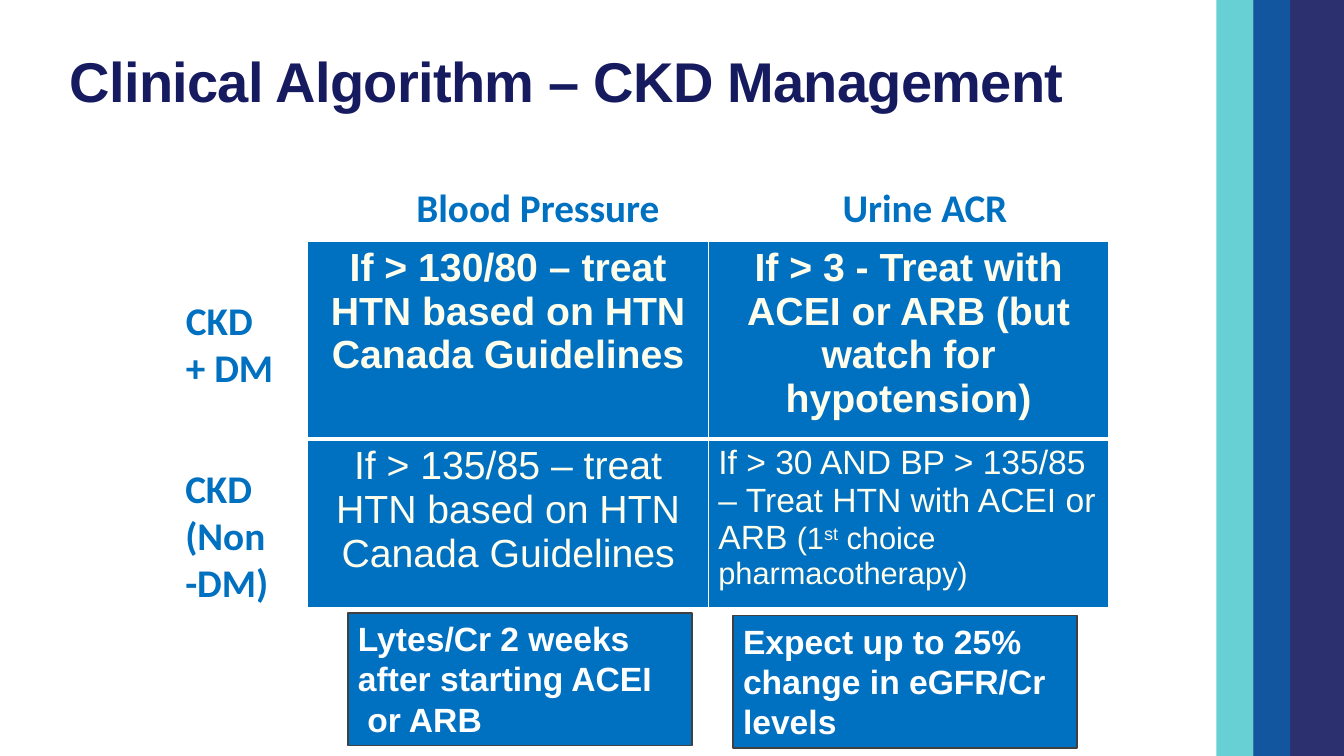
import pptx
import pptx.util
import pptx.dml.color
import pptx.enum.shapes
import pptx.enum.text
import pptx.oxml
import pptx.oxml.ns
import lxml.etree

THEME = {
    "navy": "161A5F", "blue": "0070C0", "teal": "00B2B9", "white": "FFFFFF",
    "cream": "FFFDEB", "edge": "414041",
    "title": 40, "body": 28, "note": 24, "detail": 22,
    "font": "Arial", "label_font": "Calibri",
}
RGB = pptx.dml.color.RGBColor.from_string
Pt = pptx.util.Pt
ALIGN = pptx.enum.text.PP_ALIGN
RECT = pptx.enum.shapes.MSO_SHAPE.RECTANGLE
qn = pptx.oxml.ns.qn

prs = pptx.Presentation()
prs.slide_width = pptx.util.Inches(13.33)
prs.slide_height = pptx.util.Inches(7.5)
s = prs.slides.add_slide(prs.slide_layouts[6])


def area(left, top, width, height):
    col, row = prs.slide_width / 100, prs.slide_height / 100
    return [round(v) for v in (left * col, top * row, width * col, height * row)]


def add_run(p, text, size, color, bold=True, font=THEME["font"]):
    r = p.add_run()
    r.text = text
    r.font.size = Pt(size)
    r.font.name = font
    r.font.bold = bold
    r.font.color.rgb = RGB(color)
    return r


bands = [(90.5, 2.75, "teal", 60), (93.25, 6.75, "navy", 90), (93.25, 2.75, "blue", 60)]
for left, width, color, opacity in bands:
    sp = s.shapes.add_shape(RECT, *area(left, 0, width, 100))
    sp.shadow.inherit = False
    sp.line.fill.background()
    sp.fill.solid()
    sp.fill.fore_color.rgb = RGB(THEME[color])
    clr = sp.fill._xPr.find(qn("a:solidFill"))[0]
    lxml.etree.SubElement(clr, qn("a:alpha"), val=str(opacity * 1000))

tf = s.shapes.add_textbox(*area(5.2, 7.2, 84, 10.4)).text_frame
tf.word_wrap = True
tf.margin_left = tf.margin_right = tf.margin_top = tf.margin_bottom = 0
p = tf.paragraphs[0]
p.line_spacing = 0.9
r = add_run(p, "Clinical Algorithm – CKD Management", THEME["title"], THEME["navy"])
r.font._element.set("spc", "-50")

body, note, detail = THEME["body"], THEME["note"], THEME["detail"]
cells = [
    [(ALIGN.CENTER, [("If > 130/80 – treat HTN based on HTN Canada Guidelines", body, 0)]),
     (ALIGN.CENTER, [("If > 3 - Treat with ACEI or ARB (but watch for hypotension)", body, 0)])],
    [(ALIGN.CENTER, [("If > 135/85 – treat HTN based on HTN Canada Guidelines", body, 0)]),
     (ALIGN.LEFT, [("If > 30 AND BP > 135/85 – Treat HTN with ACEI or ARB ", note, 0),
                   ("(1", detail, 0), ("st", detail, 30),
                   (" choice pharmacotherapy)", detail, 0)])],
]
row_heights = [23.6, 19.33]
table = s.shapes.add_table(2, 2, *area(22.9, 31.87, 59.6, sum(row_heights))).table
for i, height in enumerate(row_heights):
    table.rows[i].height = area(0, 0, 0, height)[3]
    for j, (align, runs) in enumerate(cells[i]):
        cell = table.cell(i, j)
        cell.fill.solid()
        cell.fill.fore_color.rgb = RGB(THEME["blue"])
        widths = {"lnL": 1, "lnR": 1, "lnT": 1 if i == 0 else 3, "lnB": 3 if i == 0 else 1}
        tcPr = cell._tc.get_or_add_tcPr()
        for k, (side, width) in enumerate(widths.items()):
            ln = lxml.etree.Element(qn("a:" + side), w=str(Pt(width)))
            fill = lxml.etree.SubElement(ln, qn("a:solidFill"))
            lxml.etree.SubElement(fill, qn("a:srgbClr"), val=THEME["white"])
            tcPr.insert(k, ln)
        p = cell.text_frame.paragraphs[0]
        p.alignment = align
        for text, size, raised in runs:
            r = add_run(p, text, size, THEME["cream"], bold=i == 0)
            if raised:
                r.font._element.set("baseline", str(raised * 1000))

labels = [
    ("Blood Pressure", 23.85, 23.6, 32.35, 7.6, ALIGN.CENTER),
    ("Urine ACR", 52.65, 23.6, 32.35, 7.6, ALIGN.CENTER),
    ("CKD + DM", 13.1, 38.5, 8.3, 13.9, ALIGN.LEFT),
    ("CKD (Non-DM)", 13.05, 60.8, 8.3, 20.1, ALIGN.LEFT),
]
for text, left, top, width, height, align in labels:
    tf = s.shapes.add_textbox(*area(left, top, width, height)).text_frame
    tf.word_wrap = True
    p = tf.paragraphs[0]
    p.alignment = align
    add_run(p, text, body, THEME["blue"], font=THEME["label_font"])

notes = [
    (25.9, 81.1, ["Lytes/Cr 2 weeks after starting ACEI", " or ARB"]),
    (54.55, 81.45, ["Expect up to 25% change in eGFR/Cr levels"]),
]
for left, top, lines in notes:
    sp = s.shapes.add_shape(RECT, *area(left, top, 25.6, 17.5))
    sp.shadow.inherit = False
    sp.fill.solid()
    sp.fill.fore_color.rgb = RGB(THEME["blue"])
    sp.line.color.rgb = RGB(THEME["edge"])
    sp.line.width = Pt(1)
    tf = sp.text_frame
    tf.word_wrap = True
    tf.vertical_anchor = pptx.enum.text.MSO_ANCHOR.TOP
    for i, text in enumerate(lines):
        p = tf.add_paragraph() if i else tf.paragraphs[0]
        p.alignment = ALIGN.LEFT
        add_run(p, text, note, THEME["white"])

prs.save("out.pptx")
